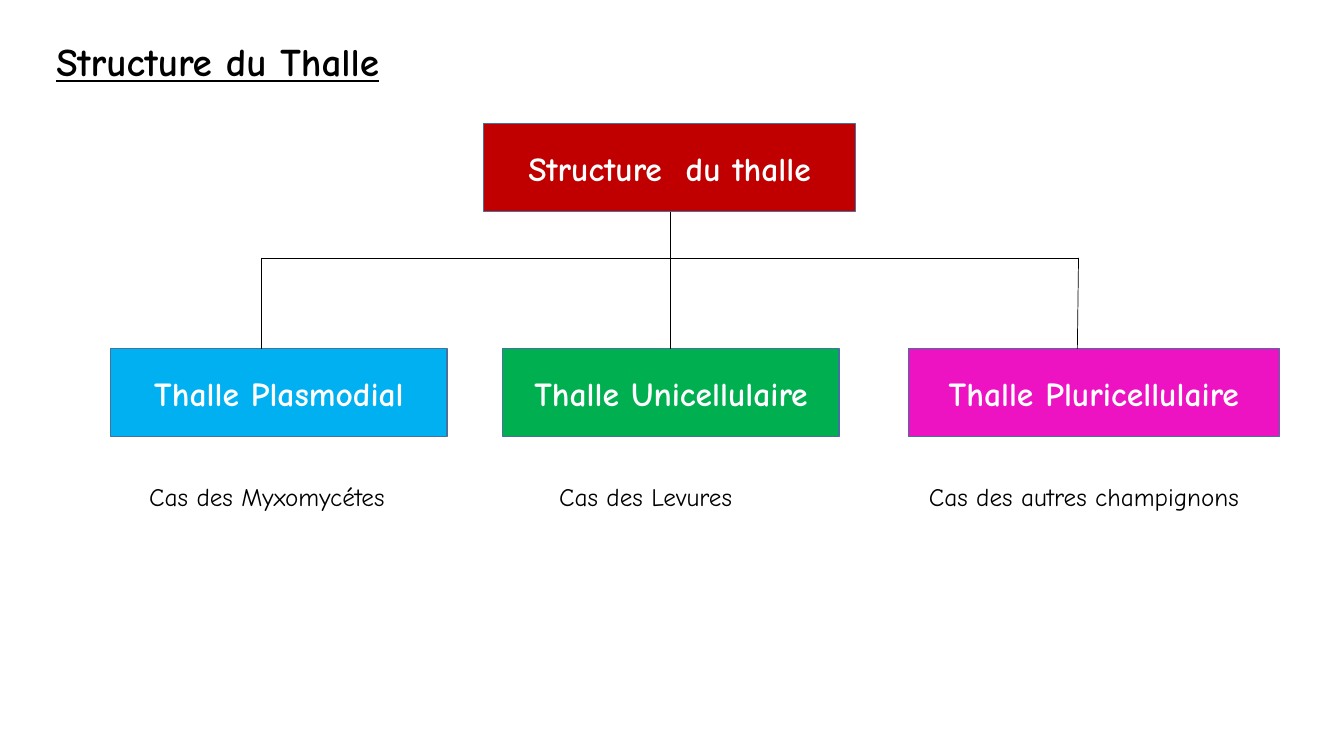
from pptx import Presentation
from pptx.dml.color import RGBColor
from pptx.enum.shapes import MSO_CONNECTOR, MSO_SHAPE
from pptx.enum.text import MSO_ANCHOR, MSO_AUTO_SIZE, PP_ALIGN
from pptx.oxml.ns import qn
from pptx.util import Cm, Pt
from lxml import etree

RECT = MSO_SHAPE.RECTANGLE
LINE = MSO_CONNECTOR.STRAIGHT
MIDDLE = MSO_ANCHOR.MIDDLE
CENTER = PP_ALIGN.CENTER
LEFT = PP_ALIGN.LEFT
GROW = MSO_AUTO_SIZE.SHAPE_TO_FIT_TEXT

BLACK = RGBColor(0x00, 0x00, 0x00)
WHITE = RGBColor(0xFF, 0xFF, 0xFF)
RED = RGBColor(0xC0, 0x00, 0x00)
BLUE = RGBColor(0x00, 0xB0, 0xF0)
GREEN = RGBColor(0x00, 0xB0, 0x50)
PINK = RGBColor(0xED, 0x13, 0xC3)
EDGE = RGBColor(0x43, 0x73, 0x9E)


class Chart:
    face = "Comic Neue"
    high = 2.21

    def __init__(self, slide):
        self.shapes = slide.shapes

    def style(self, frame, text, size, color, align, bold=False, under=False):
        para = frame.paragraphs[0]
        para.text = text
        para.alignment = align
        font = para.font
        font.name = self.face
        font.size = Pt(size)
        font.bold = bold
        font.underline = under
        font.color.rgb = color

    def box(self, text, left, top, width, fill):
        box = self.shapes.add_shape(RECT, Cm(left), Cm(top), Cm(width), Cm(self.high))
        box.shadow.inherit = False
        box.fill.solid()
        box.fill.fore_color.rgb = fill
        box.line.color.rgb = EDGE
        box.line.width = Pt(1)
        box.text_frame.vertical_anchor = MIDDLE
        self.style(box.text_frame, text, 24, WHITE, CENTER, bold=True)

    def label(self, text, left, top, width, height, size, strong=False):
        box = self.shapes.add_textbox(Cm(left), Cm(top), Cm(width), Cm(height))
        frame = box.text_frame
        frame.word_wrap = False
        frame.auto_size = GROW
        self.style(frame, text, size, BLACK, LEFT, strong, strong)

    def line(self, x1, y1, x2, y2):
        line = self.shapes.add_connector(LINE, Cm(x1), Cm(y1), Cm(x2), Cm(y2))
        line.line.color.rgb = BLACK
        line.line.width = Pt(0.5)
        etree.SubElement(line._element.spPr, qn("a:effectLst"))


def main():
    deck = Presentation()
    deck.slide_width = Cm(33.87)
    deck.slide_height = Cm(19.05)
    chart = Chart(deck.slides.add_slide(deck.slide_layouts[6]))

    root, bar, row = 3.12, 6.5, 8.79
    kinds = [
        ("Thalle Plasmodial", 2.79, 8.48, BLUE, "Cas des Myxomycétes", 3.51, 7.06),
        ("Thalle Unicellulaire", 12.67, 8.48, GREEN, "Cas des Levures", 13.84, 5.28),
        ("Thalle Pluricellulaire", 22.89, 9.35, PINK, "Cas des autres champignons", 23.16, 8.79),
    ]

    chart.label("Structure du Thalle", 1.17, 0.81, 10.11, 1.45, 28, strong=True)
    chart.box("Structure  du thalle", 12.19, root, 9.37, RED)
    for name, left, width, fill, case, start, span in kinds:
        chart.box(name, left, row, width, fill)
        chart.label(case, start, 12.01, span, 1.02, 18)

    chart.line(16.89, root + chart.high, 16.89, row)
    chart.line(27.18, bar, 6.58, bar)
    chart.line(27.18, bar, 27.15, row)
    chart.line(6.58, bar, 6.58, row)

    deck.save("out.pptx")


if __name__ == "__main__":
    main()
